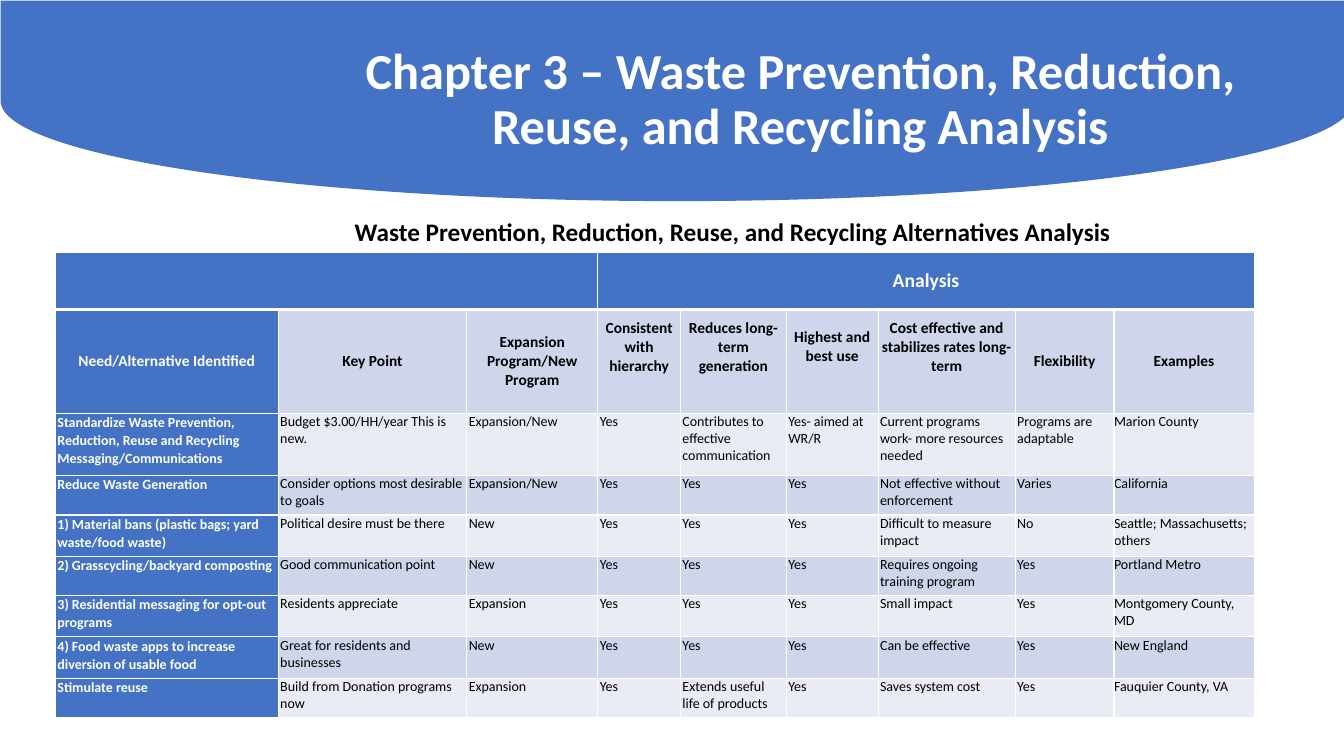
from dataclasses import dataclass

from lxml.etree import SubElement
from pptx import Presentation
from pptx.dml.color import RGBColor
from pptx.enum.shapes import MSO_SHAPE as Preset
from pptx.enum.text import MSO_ANCHOR as Anchor, MSO_AUTO_SIZE as AutoSize, PP_ALIGN as Align
from pptx.oxml.ns import qn
from pptx.util import Pt

PX = 9144  # 100 px to the inch


@dataclass(frozen=True)
class Theme:
    font: str = "Calibri"
    blue: str = "4472C4"
    dark_band: str = "CFD5EA"
    light_band: str = "E9EBF5"
    white: str = "FFFFFF"
    black: str = "000000"
    title_size: int = 36
    caption_size: int = 18
    group_size: int = 14
    header_size: int = 11
    body_size: int = 10


class SlideBuilder:
    def __init__(self, page, theme):
        self.page = page
        self.theme = theme

    def place(self, shape, left, top, width, height):
        shape.left, shape.top = left * PX, top * PX
        shape.width, shape.height = width * PX, height * PX

    def add_text(self, frame, text, size, color, bold=True, align=Align.LEFT, spacing=None):
        para = frame.paragraphs[0]
        para.alignment = align
        if spacing:
            para.line_spacing = spacing
        span = para.add_run()
        span.text = text
        span.font.name = self.theme.font
        span.font.size = Pt(size)
        span.font.bold = bold
        span.font.color.rgb = RGBColor.from_string(color)

    def banner(self, left, top, width, height):
        shape = self.page.shapes.add_shape(
            Preset.FLOWCHART_DELAY, left * PX, top * PX, width * PX, height * PX)
        shape.rotation = 90
        shape.shadow.inherit = False
        shape.fill.solid()
        shape.fill.fore_color.rgb = RGBColor.from_string(self.theme.blue)
        shape.line.fill.background()
        # Send behind the title
        self.page.shapes.element.insert(2, shape.element)

    def title(self, text, *bounds):
        shape = self.page.shapes.title
        self.place(shape, *bounds)
        frame = shape.text_frame
        frame.word_wrap = True
        frame.auto_size = AutoSize.NONE
        frame.vertical_anchor = Anchor.MIDDLE
        self.add_text(frame, text, self.theme.title_size, self.theme.white,
                      align=Align.CENTER, spacing=0.9)

    def caption(self, text, left, top, width, height):
        box = self.page.shapes.add_textbox(left * PX, top * PX, width * PX, height * PX)
        box.text_frame.word_wrap = False
        box.text_frame.auto_size = AutoSize.SHAPE_TO_FIT_TEXT
        self.add_text(box.text_frame, text, self.theme.caption_size, self.theme.black)

    def table(self, left, top, widths, heights):
        table = self.page.shapes.add_table(
            len(heights), len(widths), left * PX, top * PX,
            sum(widths) * PX, sum(heights) * PX).table
        table.first_row = table.horz_banding = False
        for column, width in zip(table.columns, widths):
            column.width = width * PX
        for row, height in zip(table.rows, heights):
            row.height = height * PX
        return table

    def cell(self, cell, fill, top_line=1, bottom_line=1, side=2, bottom=0, anchor=Anchor.TOP):
        cell.margin_left = cell.margin_right = side * PX
        cell.margin_top, cell.margin_bottom = 0, bottom * PX
        cell.vertical_anchor = anchor
        cell.fill.solid()
        cell.fill.fore_color.rgb = RGBColor.from_string(fill)
        # Borders come before the fill in the cell properties
        props = cell._tc.get_or_add_tcPr()
        edges = (("a:lnL", 1), ("a:lnR", 1), ("a:lnT", top_line), ("a:lnB", bottom_line))
        for position, (edge, points) in enumerate(edges):
            line = SubElement(props, qn(edge), w=str(Pt(points)))
            color = SubElement(SubElement(line, qn("a:solidFill")), qn("a:srgbClr"))
            color.set("val", self.theme.white)
            props.insert(position, line)


WIDTHS = [221, 187, 130, 82, 105, 91, 136, 98, 139]
HEIGHTS = [57, 103, 62, 39, 41, 39, 41, 41, 39]
RAISED = range(3, 7)  # header columns set above the middle
HEADERS = ["Need/Alternative Identified", "Key Point", "Expansion Program/New Program",
           "Consistent with hierarchy", "Reduces long-term generation",
           "Highest and best use", "Cost effective and stabilizes rates long-term",
           "Flexibility", "Examples"]
ALTERNATIVES = [
    ["Standardize Waste Prevention, Reduction, Reuse and Recycling Messaging/Communications",
     "Budget $3.00/HH/year This is new.", "Expansion/New", "Yes",
     "Contributes to effective communication", "Yes- aimed at WR/R",
     "Current programs work- more resources needed", "Programs are adaptable",
     "Marion County"],
    ["Reduce Waste Generation", "Consider options most desirable to goals", "Expansion/New",
     "Yes", "Yes", "Yes", "Not effective without enforcement", "Varies", "California"],
    ["1) Material bans (plastic bags; yard waste/food waste)",
     "Political desire must be there", "New", "Yes", "Yes", "Yes",
     "Difficult to measure impact", "No", "Seattle; Massachusetts; others"],
    ["2) Grasscycling/backyard composting", "Good communication point", "New",
     "Yes", "Yes", "Yes", "Requires ongoing training program", "Yes", "Portland Metro"],
    ["3) Residential messaging for opt-out programs", "Residents appreciate", "Expansion",
     "Yes", "Yes", "Yes", "Small impact", "Yes", "Montgomery County, MD"],
    ["4) Food waste apps to increase diversion of usable food",
     "Great for residents and businesses", "New", "Yes", "Yes", "Yes",
     "Can be effective", "Yes", "New England"],
    ["Stimulate reuse", "Build from Donation programs now", "Expansion", "Yes",
     "Extends useful life of products", "Yes", "Saves system cost", "Yes",
     "Fauquier County, VA"],
]


def fill_table(builder, table):
    theme = builder.theme
    last = len(WIDTHS) - 1

    # Group row
    for column in range(len(WIDTHS)):
        builder.cell(table.cell(0, column), theme.blue, bottom_line=3, anchor=Anchor.MIDDLE)
    table.cell(0, 0).merge(table.cell(0, 2))
    table.cell(0, 3).merge(table.cell(0, last))
    builder.add_text(table.cell(0, 3).text_frame, "Analysis", theme.group_size, theme.white,
                     align=Align.CENTER)

    # Column headers
    for column, text in enumerate(HEADERS):
        cell = table.cell(1, column)
        builder.cell(cell, theme.dark_band if column else theme.blue, top_line=3,
                     side=0 if column == last else 2,
                     bottom=29 if column in RAISED else 0, anchor=Anchor.MIDDLE)
        builder.add_text(cell.text_frame, text, theme.header_size,
                         theme.black if column else theme.white, align=Align.CENTER)

    # Alternatives
    for row, texts in enumerate(ALTERNATIVES, start=2):
        band = theme.dark_band if row % 2 else theme.light_band
        for column, text in enumerate(texts):
            cell = table.cell(row, column)
            builder.cell(cell, band if column else theme.blue, side=0 if column == last else 2)
            builder.add_text(cell.text_frame, text, theme.body_size,
                             theme.black if column else theme.white,
                             bold=column == 0, spacing=None if column else 1.06)


def main():
    deck = Presentation()
    deck.slide_width, deck.slide_height = 1333 * PX, 750 * PX
    page = deck.slides.add_slide(deck.slide_layouts[5])
    builder = SlideBuilder(page, Theme())

    # Heading
    builder.banner(572, -571, 199, 1342)
    builder.title("Chapter 3 – Waste Prevention, Reduction, Reuse, and Recycling Analysis",
                  346, 40, 896, 120)

    # Analysis table
    fill_table(builder, builder.table(55, 250, WIDTHS, HEIGHTS))
    builder.caption("Waste Prevention, Reduction, Reuse, and Recycling Alternatives Analysis",
                    342, 210, 776, 40)

    deck.save("out.pptx")


if __name__ == "__main__":
    main()
